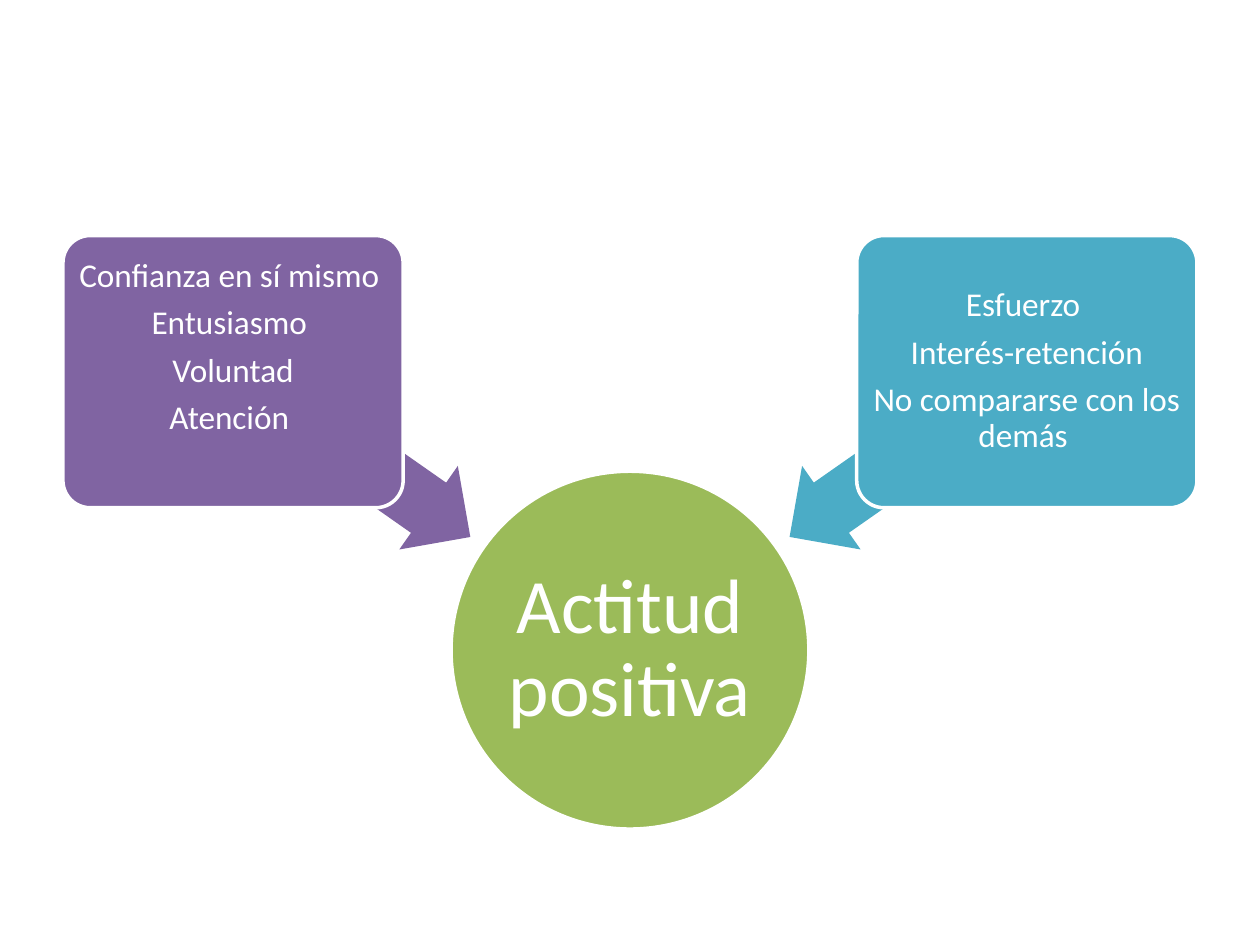
from pptx import Presentation
from pptx.dml.color import RGBColor
from pptx.enum.shapes import MSO_SHAPE
from pptx.enum.text import MSO_ANCHOR, PP_ALIGN
from pptx.util import Inches, Pt

WHITE = RGBColor(0xFF, 0xFF, 0xFF)
GREEN = RGBColor(0x9B, 0xBB, 0x59)
PURPLE = RGBColor(0x80, 0x64, 0xA2)
TEAL = RGBColor(0x4B, 0xAC, 0xC6)
FONT = "Calibri"

CIRCLE = MSO_SHAPE.OVAL
ROUNDED = MSO_SHAPE.ROUNDED_RECTANGLE
LEFT_ARROW = MSO_SHAPE.LEFT_ARROW
MIDDLE = MSO_ANCHOR.MIDDLE
CENTER = PP_ALIGN.CENTER

SLIDE_WIDTH = 10
CIRCLE_SIZE, CIRCLE_TOP = 2.84, 3.74
BOX_WIDTH, BOX_HEIGHT, BOX_TOP = 2.7, 2.16, 1.87
ARROW_WIDTH, ARROW_HEIGHT, ARROW_TOP = 2.29, 0.81, 3.2


def add_filled(slide, kind, left, top, width, height, color):
    shape = slide.shapes.add_shape(
        kind, Inches(left), Inches(top), Inches(width), Inches(height))
    shape.shadow.inherit = False
    shape.fill.solid()
    shape.fill.fore_color.rgb = color
    shape.line.fill.background()
    return shape


def outline(shape):
    shape.line.color.rgb = WHITE
    shape.line.width = Pt(2)


def write_lines(shape, lines, size, inset, bottom_inset):
    frame = shape.text_frame
    frame.word_wrap = True
    frame.vertical_anchor = MIDDLE
    frame.margin_left = frame.margin_right = frame.margin_top = Inches(inset)
    frame.margin_bottom = Inches(bottom_inset)
    for index, line in enumerate(lines):
        paragraph = frame.add_paragraph() if index else frame.paragraphs[0]
        paragraph.alignment = CENTER
        paragraph.line_spacing = 0.9
        paragraph.space_after = Pt(round(size * 0.35, 1))
        run = paragraph.add_run()
        run.text = line
        run.font.name = FONT
        run.font.size = Pt(size)
        run.font.color.rgb = WHITE


def add_goal(slide, text):
    left = (SLIDE_WIDTH - CIRCLE_SIZE) / 2
    goal = add_filled(slide, CIRCLE, left, CIRCLE_TOP,
                      CIRCLE_SIZE, CIRCLE_SIZE, GREEN)
    outline(goal)
    write_lines(goal, [text], 44, 0.03, 0.03)


def add_arrow(slide, left, rotation, color):
    arrow = add_filled(slide, LEFT_ARROW, left, ARROW_TOP,
                       ARROW_WIDTH, ARROW_HEIGHT, color)
    arrow.adjustments[0] = 0.6
    arrow.adjustments[1] = 0.5
    arrow.rotation = rotation


def add_trait_box(slide, left, color, traits, bottom_inset=0.04):
    box = add_filled(slide, ROUNDED, left, BOX_TOP,
                     BOX_WIDTH, BOX_HEIGHT, color)
    box.adjustments[0] = 0.1
    outline(box)
    write_lines(box, traits, 19, 0.04, bottom_inset)


def main():
    prs = Presentation()
    prs.slide_width, prs.slide_height = Inches(SLIDE_WIDTH), Inches(7.5)
    slide = prs.slides.add_slide(prs.slide_layouts[6])

    add_goal(slide, "Actitud positiva ")

    margin, arrow_margin = 0.5, 1.65
    add_arrow(slide, arrow_margin, 215, PURPLE)
    add_trait_box(slide, margin, PURPLE,
                  ["Confianza en sí mismo ", "Entusiasmo ", "Voluntad",
                   "Atención "], bottom_inset=0.42)
    add_arrow(slide, SLIDE_WIDTH - arrow_margin - ARROW_WIDTH, 325, TEAL)
    add_trait_box(slide, SLIDE_WIDTH - margin - BOX_WIDTH, TEAL,
                  ["Esfuerzo ", "Interés-retención",
                   "No compararse con los demás "])

    prs.save("out.pptx")


if __name__ == "__main__":
    main()
